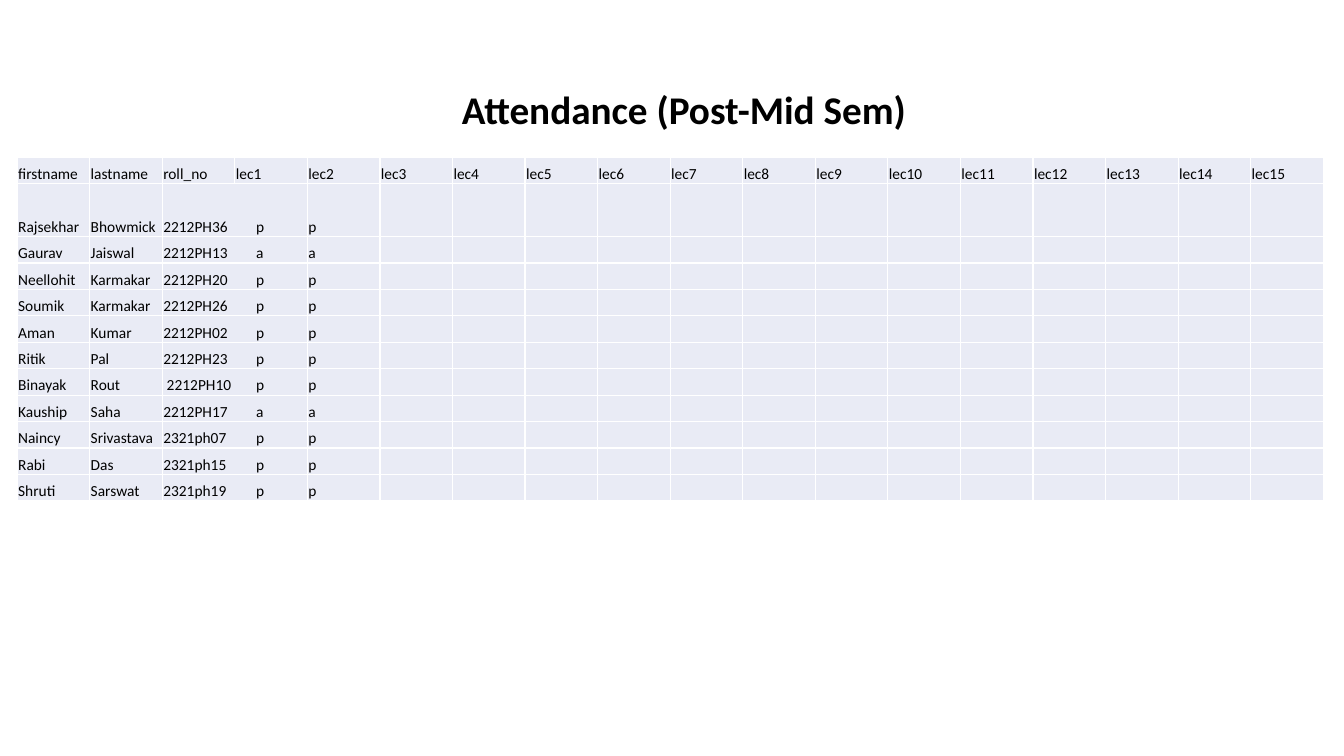
from lxml.etree import SubElement
from pptx import Presentation
from pptx.dml.color import RGBColor
from pptx.enum.text import MSO_ANCHOR as Anchor, MSO_AUTO_SIZE as AutoSize, PP_ALIGN as Align
from pptx.oxml.ns import qn
from pptx.util import Inches, Pt

BLACK = RGBColor(0x00, 0x00, 0x00)
WHITE = RGBColor(0xFF, 0xFF, 0xFF)
PALE_BLUE = RGBColor(0xE9, 0xEB, 0xF5)
FONT = "Calibri"
COL_WIDTH = Inches(0.72)
ROW_HEIGHT = Inches(3.41 / 13)
MARK_TAB = Inches(0.92)
ROLL_COL = 2

HEADINGS = ["firstname", "lastname", "roll_no"] + [f"lec{n}" for n in range(1, 16)]
# first name, last name, roll number, mark in lec1, mark in lec2
STUDENTS = [
    ("Rajsekhar", "Bhowmick", "2212PH36", "p", "p"),
    ("Gaurav", "Jaiswal", "2212PH13", "a", "a"),
    ("Neellohit", "Karmakar", "2212PH20", "p", "p"),
    ("Soumik", "Karmakar", "2212PH26", "p", "p"),
    ("Aman", "Kumar", "2212PH02", "p", "p"),
    ("Ritik", "Pal", "2212PH23", "p", "p"),
    ("Binayak", "Rout", " 2212PH10", "p", "p"),
    ("Kauship", "Saha", "2212PH17", "a", "a"),
    ("Naincy", "Srivastava", "2321ph07", "p", "p"),
    ("Rabi", "Das", "2321ph15", "p", "p"),
    ("Shruti", "Sarswat", "2321ph19", "p", "p"),
]


def add_run(paragraph, text, size, bold=False):
    run = paragraph.add_run()
    run.text = text
    run.font.name, run.font.size, run.font.bold = FONT, Pt(size), bold
    run.font.color.rgb = BLACK


def format_cell(cell):
    """Set the margins, white borders and pale fill of one cell."""
    cell.margin_left = cell.margin_right = cell.margin_top = Inches(0.01)
    cell.margin_bottom = 0
    cell.vertical_anchor = Anchor.BOTTOM
    properties = cell._tc.get_or_add_tcPr()
    for side in ("a:lnL", "a:lnR", "a:lnT", "a:lnB"):
        border = SubElement(properties, qn(side), w=str(Pt(1)))
        border_fill = SubElement(border, qn("a:solidFill"))
        SubElement(border_fill, qn("a:srgbClr"), val=str(WHITE))
    cell.fill.solid()
    cell.fill.fore_color.rgb = PALE_BLUE


prs = Presentation()
prs.slide_width, prs.slide_height = Inches(13.33), Inches(7.5)
slide = prs.slides.add_slide(prs.slide_layouts[5])

title = slide.shapes.title
title.left, title.top = Inches(4.48), Inches(0.8)
title.width, title.height = Inches(4.68), Inches(0.57)
title_frame = title.text_frame
title_frame.word_wrap = False
title_frame.auto_size = AutoSize.SHAPE_TO_FIT_TEXT
title_frame.vertical_anchor = Anchor.TOP
heading = title_frame.paragraphs[0]
heading.alignment = Align.LEFT
add_run(heading, "Attendance (Post-Mid Sem)", 28, bold=True)

row_count, col_count = len(STUDENTS) + 1, len(HEADINGS)
attendance = slide.shapes.add_table(
    row_count, col_count, Inches(0.17), Inches(1.56),
    COL_WIDTH * col_count, ROW_HEIGHT * (row_count + 1)).table
attendance.first_row = attendance.horz_banding = False
for column in attendance.columns:
    column.width = COL_WIDTH
for row in attendance.rows:
    row.height = ROW_HEIGHT
attendance.rows[1].height = 2 * ROW_HEIGHT

for r in range(1, row_count):
    attendance.cell(r, ROLL_COL).merge(attendance.cell(r, ROLL_COL + 1))

# The roll number and the lec1 mark share a merged cell, split by a tab.
entries = [HEADINGS] + [
    [first, last, f"{roll}\t{lec1}", "", lec2]
    for first, last, roll, lec1, lec2 in STUDENTS]

for r, entry in enumerate(entries):
    for c in range(col_count):
        cell = attendance.cell(r, c)
        format_cell(cell)
        paragraph = cell.text_frame.paragraphs[0]
        text = entry[c] if c < len(entry) else ""
        if "\t" in text:
            tabs = SubElement(paragraph._p.get_or_add_pPr(), qn("a:tabLst"))
            SubElement(tabs, qn("a:tab"), pos=str(MARK_TAB), algn="l")
        if text:
            add_run(paragraph, text, 11)
        else:
            SubElement(paragraph._p, qn("a:endParaRPr"), sz="1100")

prs.save("out.pptx")
